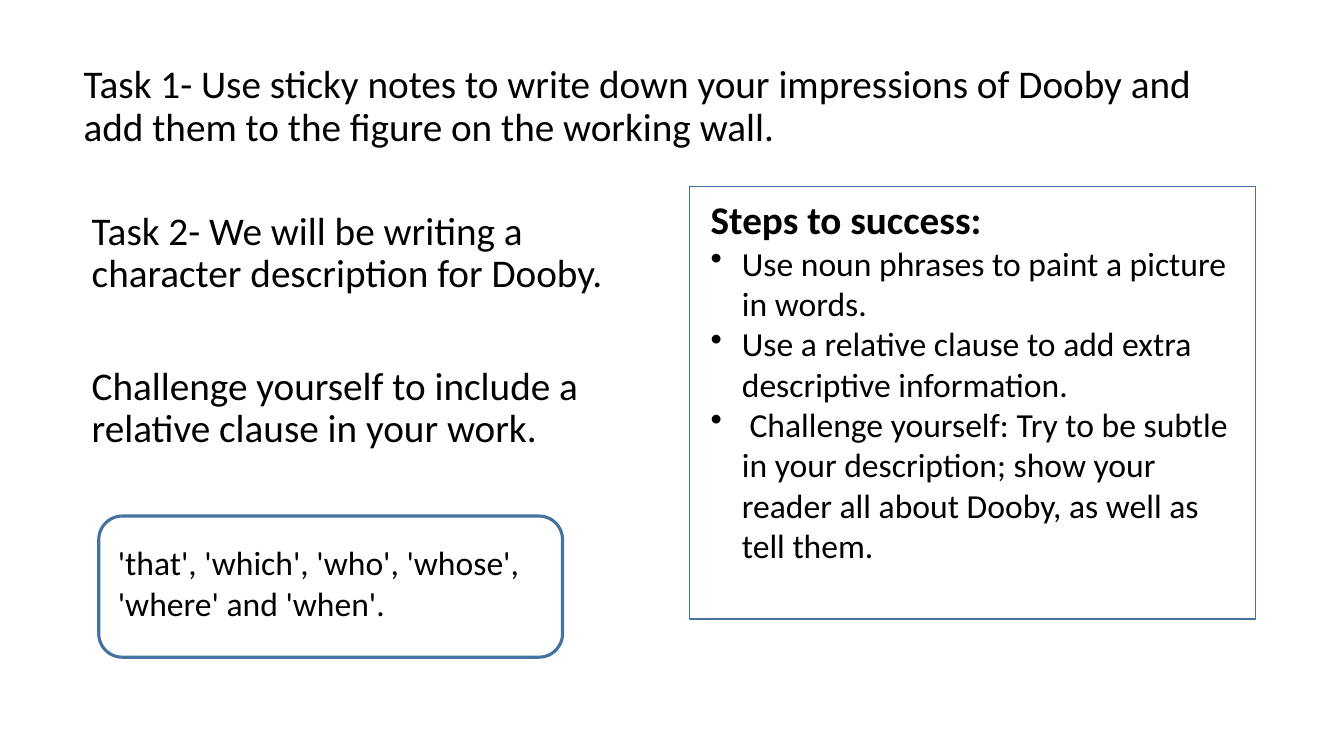
import dataclasses

import lxml.etree
import pptx
import pptx.dml.color
import pptx.enum.shapes
import pptx.enum.text
import pptx.oxml.ns
import pptx.util

PX = 9144


@dataclasses.dataclass(frozen=True)
class Theme:
    """Colours, font and type sizes of the slide."""
    font: str = "Calibri"
    text: str = "000000"
    frame: str = "43739E"
    large: int = 28
    small: int = 24


THEME = Theme()
STEPS = [
    "Use noun phrases to paint a picture in words.",
    "Use a relative clause to add extra descriptive information.",
    " Challenge yourself: Try to be subtle in your description; "
    "show your reader all about Dooby, as well as tell them.",
]


def px(n):
    """Turn whole pixels into EMU."""
    return pptx.util.Emu(n * PX)


def rgb(value):
    """Make a colour from its hex value."""
    return pptx.dml.color.RGBColor.from_string(value)


def place(shape, left, top, width, height):
    """Move and size a shape in pixels."""
    shape.left, shape.top = px(left), px(top)
    shape.width, shape.height = px(width), px(height)


def style(p, size, bold=False, line=1.0, before=0):
    """Format a paragraph and its runs."""
    p.alignment = pptx.enum.text.PP_ALIGN.LEFT
    p.line_spacing = line
    p.space_before = pptx.util.Pt(before)
    for r in p.runs:
        r.font.name = THEME.font
        r.font.size = pptx.util.Pt(size)
        r.font.bold = bold
        r.font.color.rgb = rgb(THEME.text)


def set_bullet(p, char=None, indent=0):
    """Give a paragraph a hanging bullet, or none."""
    pPr = p._p.get_or_add_pPr()
    pPr.set("marL", str(px(indent)))
    pPr.set("indent", str(-px(indent)))
    tag = "a:buChar" if char else "a:buNone"
    bullet = lxml.etree.SubElement(pPr, pptx.oxml.ns.qn(tag))
    if char:
        bullet.set("char", char)


def fill_placeholder(shape, box, lines, anchor, gaps):
    """Place a placeholder and write unbulleted lines into it."""
    place(shape, *box)
    tf = shape.text_frame
    tf.text = "\n".join(lines)
    tf.auto_size = pptx.enum.text.MSO_AUTO_SIZE.NONE
    tf.vertical_anchor = anchor
    for p, gap in zip(tf.paragraphs, gaps):
        style(p, THEME.large, line=0.9, before=gap)
        set_bullet(p)


def add_text(s, box, lines):
    """Add a wrapping text box and return its paragraphs."""
    tf = s.shapes.add_textbox(*map(px, box)).text_frame
    tf.word_wrap = True
    tf.text = "\n".join(lines)
    for p in tf.paragraphs:
        style(p, THEME.small)
    return tf.paragraphs


def add_frame(s, kind, box, weight):
    """Add an unfilled outline."""
    shape = s.shapes.add_shape(kind, *map(px, box))
    shape.shadow.inherit = False
    shape.fill.background()
    shape.line.color.rgb = rgb(THEME.frame)
    shape.line.width = pptx.util.Pt(weight)


def main():
    """Build the slide and save it."""
    prs = pptx.Presentation()
    prs.slide_width, prs.slide_height = px(1333), px(750)
    s = prs.slides.add_slide(prs.slide_layouts[1])
    shapes = pptx.enum.shapes.MSO_SHAPE
    anchors = pptx.enum.text.MSO_ANCHOR

    fill_placeholder(s.shapes.title, (73, 34, 1150, 145), [
        "Task 1- Use sticky notes to write down your impressions of Dooby "
        "and add them to the figure on the working wall."],
        anchors.MIDDLE, [0])
    fill_placeholder(s.placeholders[1], (81, 205, 601, 440), [
        "Task 2- We will be writing a character description for Dooby.",
        "Challenge yourself to include a relative clause in your work."],
        anchors.TOP, [10, 50])

    add_text(s, (107, 533, 472, 121),
             ["'that', 'which', 'who', 'whose', 'where' and 'when'."])
    add_frame(s, shapes.ROUNDED_RECTANGLE, (98, 512, 460, 140), 2.25)

    heading, *steps = add_text(s, (695, 189, 535, 380),
                               ["Steps to success:", *STEPS])
    style(heading, THEME.large, bold=True)
    for p in steps:
        set_bullet(p, "•", 31)
    add_frame(s, shapes.RECTANGLE, (684, 185, 561, 429), 1)

    prs.save("out.pptx")


if __name__ == "__main__":
    main()
